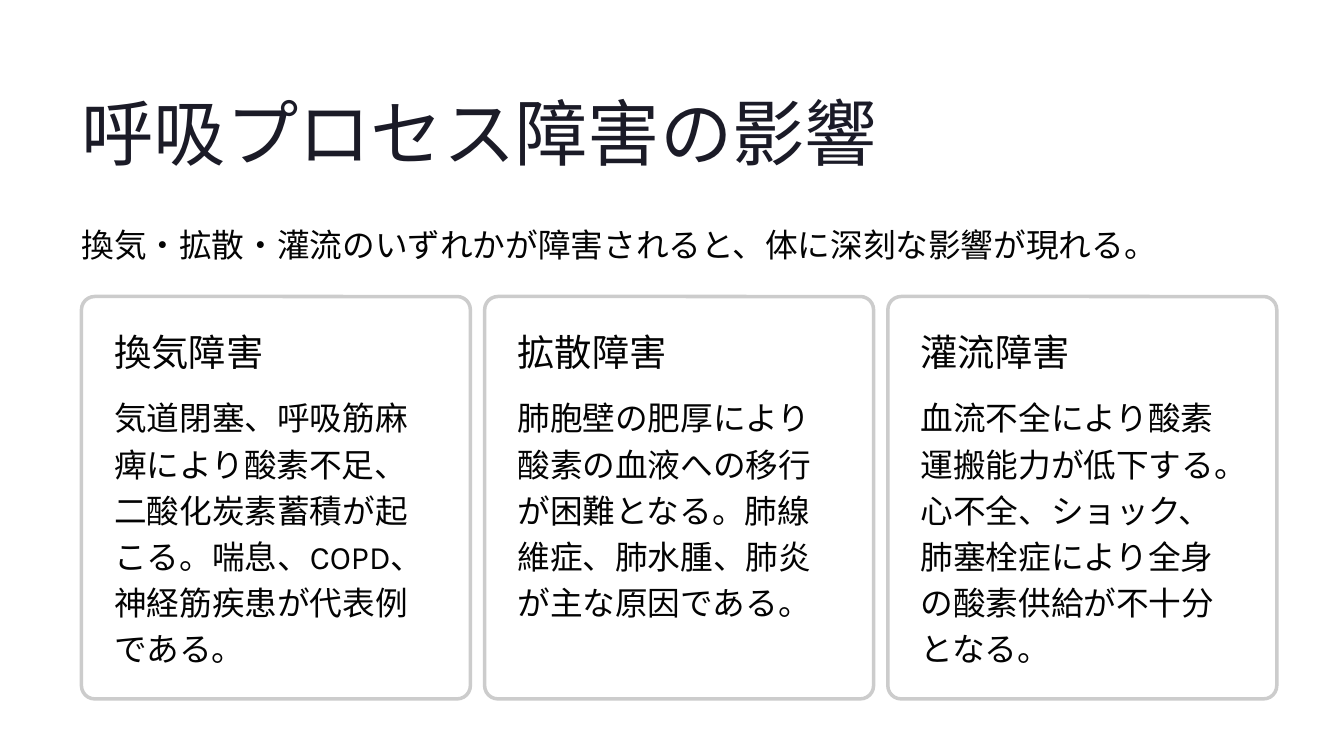
from pptx import Presentation
from pptx.dml.color import RGBColor
from pptx.enum.shapes import MSO_SHAPE
from pptx.oxml.ns import qn
from pptx.util import Inches, Pt
from lxml import etree

ROUNDED = MSO_SHAPE.ROUNDED_RECTANGLE
NAVY = RGBColor(0x1B, 0x1B, 0x27)
INK = RGBColor(0x03, 0x03, 0x03)
WHITE = RGBColor(0xFF, 0xFF, 0xFF)
BORDER = RGBColor(0xCC, 0xCC, 0xCC)

# Column grid, in inches
MARGIN = 0.97
PITCH = 4.8
CARD_TOP, CARD_WIDTH, CARD_HEIGHT = 3.53, 4.63, 4.79
PADDING = 0.39

DISORDERS = [
    ("換気障害", "気道閉塞、呼吸筋麻痺により酸素不足、二酸化炭素蓄積が起こる。喘息、COPD、神経筋疾患が代表例である。"),
    ("拡散障害", "肺胞壁の肥厚により酸素の血液への移行が困難となる。肺線維症、肺水腫、肺炎が主な原因である。"),
    ("灌流障害", "血流不全により酸素運搬能力が低下する。心不全、ショック、肺塞栓症により全身の酸素供給が不十分となる。"),
]


class SlideBuilder:
    heading_font = "Inter"
    body_font = "Karla"

    def __init__(self, slide):
        self.slide = slide

    def text(self, words, left, top, width, height, font, size, leading,
             color=INK, wrap=False):
        box = self.slide.shapes.add_textbox(
            Inches(left), Inches(top), Inches(width), Inches(height))
        frame = box.text_frame
        frame.margin_left = frame.margin_right = 0
        frame.margin_top = frame.margin_bottom = 0
        frame.word_wrap = wrap
        paragraph = frame.paragraphs[0]
        paragraph.text = words
        paragraph.line_spacing = Pt(leading)
        paragraph.font.name = font
        paragraph.font.size = Pt(size)
        paragraph.font.color.rgb = color

    def panel(self, left):
        panel = self.slide.shapes.add_shape(
            ROUNDED, Inches(left), Inches(CARD_TOP),
            Inches(CARD_WIDTH), Inches(CARD_HEIGHT))
        panel.adjustments[0] = 0.034
        panel.shadow.inherit = False
        panel.fill.solid()
        panel.fill.fore_color.rgb = WHITE
        panel.line.color.rgb = BORDER
        panel.line.width = Pt(3)
        # Slightly transparent fill
        fill_color = panel._element.spPr.find(qn("a:solidFill"))[0]
        etree.SubElement(fill_color, qn("a:alpha")).set("val", "95000")

    def card(self, column, heading, description):
        left = MARGIN + column * PITCH
        text_left = left + PADDING
        text_width = CARD_WIDTH - 2 * PADDING - 0.02
        self.panel(left)
        self.text(heading, text_left, CARD_TOP + PADDING, text_width, 0.6,
                  self.heading_font, 32, 38.5)
        self.text(description, text_left, CARD_TOP + 1.13, text_width, 3.09,
                  self.body_font, 28, 39.5, wrap=True)


def main():
    deck = Presentation()
    deck.slide_width, deck.slide_height = Inches(16), Inches(9)
    builder = SlideBuilder(deck.slides.add_slide(deck.slide_layouts[6]))

    # Title and lead sentence
    builder.text("呼吸プロセス障害の影響", MARGIN, 1.01, 9.48, 1.08,
                 builder.heading_font, 62, 77.5, color=NAVY)
    builder.text("換気・拡散・灌流のいずれかが障害されると、体に深刻な影響が現れる。",
                 MARGIN, 2.59, 14.61, 0.62, builder.body_font, 28, 39.5)

    # One card per disorder
    for column, (heading, description) in enumerate(DISORDERS):
        builder.card(column, heading, description)

    deck.save("out.pptx")


if __name__ == "__main__":
    main()
